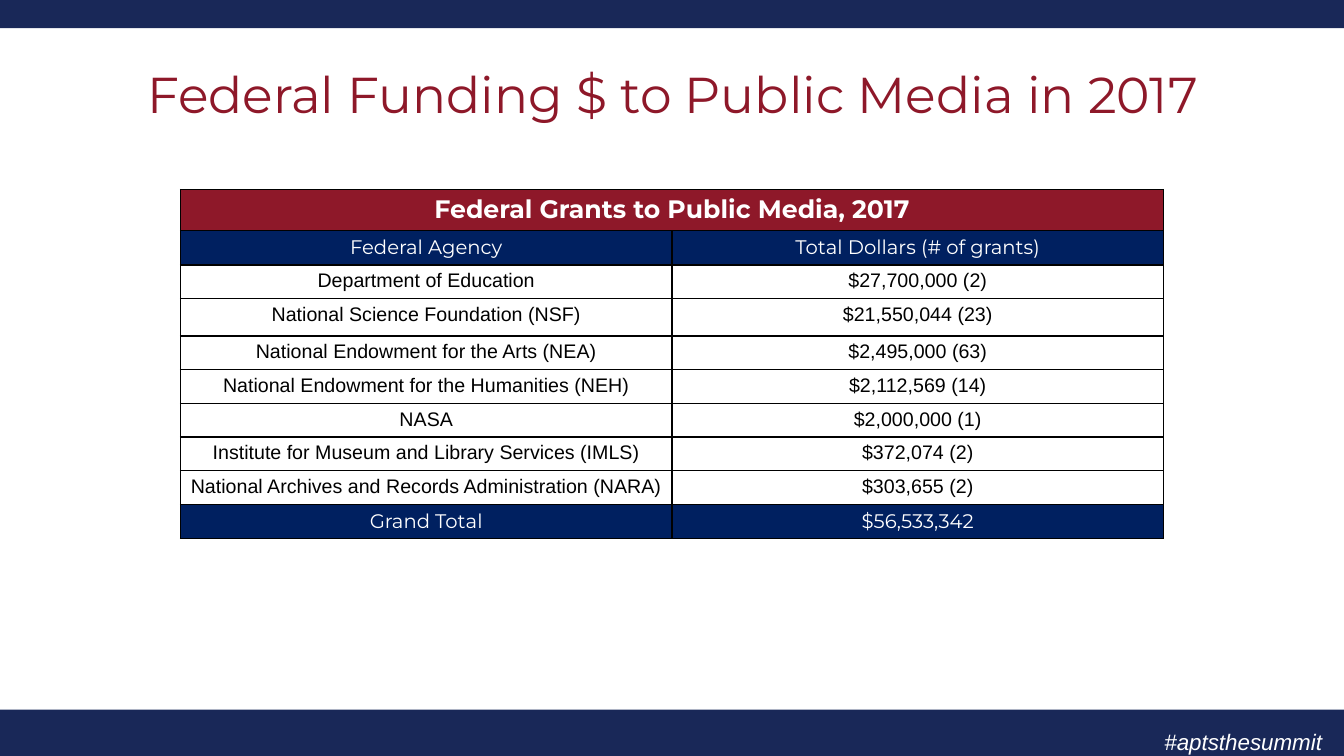
from dataclasses import dataclass

from lxml import etree
from pptx import Presentation
from pptx.enum import shapes, text
from pptx.oxml import ns
from pptx import util as u
from pptx.dml.color import RGBColor

COLORS = {"band": "192858", "crimson": "8E1829", "navy": "002060",
          "white": "FFFFFF", "black": "000000"}
HEADING_FONT, BODY_FONT = "Montserrat", "Arial"


@dataclass(frozen=True)
class Band:
    left: float
    top: float
    width: float
    height: float


@dataclass(frozen=True)
class RowStyle:
    fill: str
    color: str
    font: str
    size: int = 14
    bold: bool = False


@dataclass(frozen=True)
class Row:
    cells: tuple[str, ...]
    height: float
    style: RowStyle


BANNER = RowStyle("crimson", "white", HEADING_FONT, 18, True)
HEADER = RowStyle("navy", "white", HEADING_FONT)
AGENCY = RowStyle("white", "black", BODY_FONT)

BANDS = (Band(-0.02, 7.04, 13.35, 0.46), Band(0, 0, 13.33, 0.28))
ROWS = (
    Row(("Federal Grants to Public Media, 2017",), 0.41, BANNER),
    Row(("Federal Agency", "Total Dollars (# of grants)"), 0.34, HEADER),
    Row(("Department of Education", "$27,700,000 (2)"), 0.32, AGENCY),
    Row(("National Science Foundation (NSF)", "$21,550,044 (23)"), 0.37, AGENCY),
    Row(("National Endowment for the Arts (NEA)", "$2,495,000 (63)"), 0.32, AGENCY),
    Row(("National Endowment for the Humanities (NEH)", "$2,112,569 (14)"), 0.32, AGENCY),
    Row(("NASA", "$2,000,000 (1)"), 0.32, AGENCY),
    Row(("Institute for Museum and Library Services (IMLS)", "$372,074 (2)"), 0.32, AGENCY),
    Row(("National Archives and Records Administration (NARA)", "$303,655 (2)"), 0.32, AGENCY),
    Row(("Grand Total", "$56,533,342"), 0.34, HEADER),
)


def rgb(name: str) -> RGBColor:
    return RGBColor.from_string(COLORS[name])


def write(tf, content: str, *, size: int, color: str, font: str,
          bold: bool = False, italic: bool = False, align=text.PP_ALIGN.CENTER) -> None:
    p = tf.paragraphs[0]
    p.alignment = align
    r = p.add_run()
    r.text = content
    r.font.name, r.font.size = font, u.Pt(size)
    r.font.bold, r.font.italic = bold, italic
    r.font.color.rgb = rgb(color)


def place(sp, left: float, top: float, width: float, height: float) -> None:
    sp.left, sp.top = u.Inches(left), u.Inches(top)
    sp.width, sp.height = u.Inches(width), u.Inches(height)


def add_band(s, band: Band) -> None:
    sp = s.shapes.add_shape(shapes.MSO_SHAPE.RECTANGLE, 0, 0, 0, 0)
    place(sp, band.left, band.top, band.width, band.height)
    sp.shadow.inherit = False
    sp.fill.solid()
    sp.fill.fore_color.rgb = rgb("band")
    sp.line.fill.background()


def add_borders(cell) -> None:
    """Draw all four cell edges; call before the fill, which must follow them."""
    tc_pr = cell._tc.get_or_add_tcPr()
    for edge in ("lnL", "lnR", "lnT", "lnB"):
        ln = etree.SubElement(tc_pr, ns.qn(f"a:{edge}"), w=str(u.Pt(1)))
        fill = etree.SubElement(ln, ns.qn("a:solidFill"))
        etree.SubElement(fill, ns.qn("a:srgbClr"), val=COLORS["black"])


def add_grants_table(s) -> None:
    height = sum(row.height for row in ROWS)
    table = s.shapes.add_table(len(ROWS), 2, u.Inches(1.79), u.Inches(1.88),
                               u.Inches(9.75), u.Inches(height)).table
    for i, row in enumerate(ROWS):
        table.rows[i].height = u.Inches(row.height)
        style = row.style
        for cell in table.rows[i].cells:
            add_borders(cell)
            cell.fill.solid()
            cell.fill.fore_color.rgb = rgb(style.fill)
            cell.margin_left = cell.margin_right = u.Inches(0.07)
        if len(row.cells) == 1:
            table.cell(i, 0).merge(table.cell(i, 1))
        for j, content in enumerate(row.cells):
            write(table.cell(i, j).text_frame, content, size=style.size,
                  color=style.color, font=style.font, bold=style.bold)


def add_title(s) -> None:
    sp = s.shapes.title
    place(sp, 0.67, 0.3, 12, 1.25)
    sp.text_frame.vertical_anchor = text.MSO_ANCHOR.MIDDLE
    write(sp.text_frame, "Federal Funding $ to Public Media in 2017",
          size=36, color="crimson", font=HEADING_FONT)


def add_hashtag(s) -> None:
    sp = s.shapes.add_textbox(0, 0, 0, 0)
    place(sp, 11.45, 7.17, 2.24, 0.37)
    sp.text_frame.word_wrap = True
    write(sp.text_frame, "#aptsthesummit", size=16, color="white",
          font=BODY_FONT, italic=True, align=text.PP_ALIGN.LEFT)


def main() -> None:
    prs = Presentation()
    prs.slide_width, prs.slide_height = u.Inches(13.33), u.Inches(7.5)
    s = prs.slides.add_slide(prs.slide_layouts.get_by_name("Title Only"))
    for band in BANDS:
        add_band(s, band)
    add_hashtag(s)
    add_title(s)
    add_grants_table(s)
    prs.save("out.pptx")


if __name__ == "__main__":
    main()
